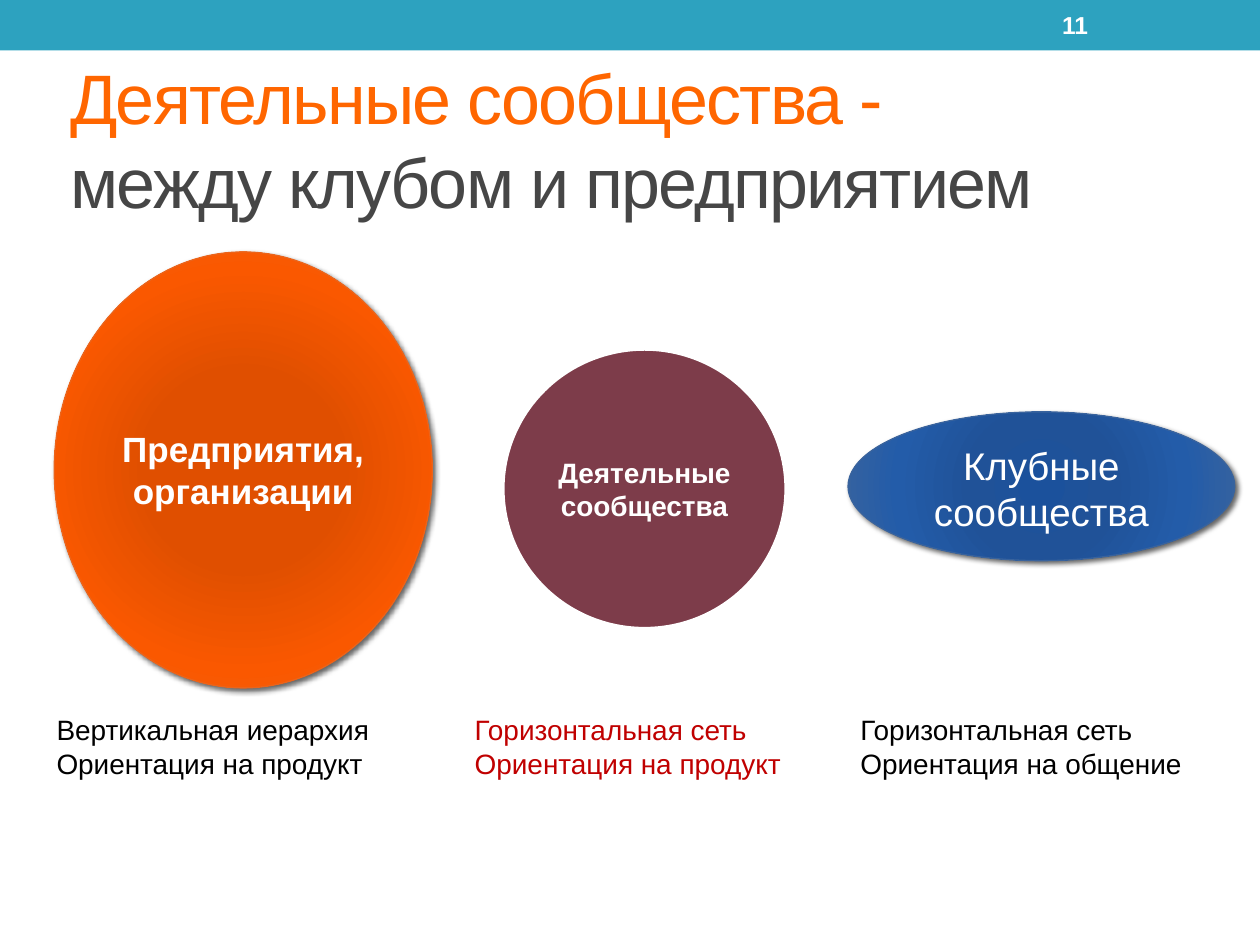
import pptx
import pptx.util
import pptx.dml.color
import pptx.enum.shapes
import pptx.enum.text
import pptx.oxml
import pptx.oxml.ns

Pt = pptx.util.Pt
SHAPES = pptx.enum.shapes.MSO_SHAPE
MIDDLE = pptx.enum.text.MSO_ANCHOR.MIDDLE
CENTER = pptx.enum.text.PP_ALIGN.CENTER
NS = pptx.oxml.ns.nsdecls("a")


def color(value):
    return pptx.dml.color.RGBColor.from_string(value)


def add_run(paragraph, text, size, value, bold=False):
    run = paragraph.add_run()
    run.text = text
    run.font.name = "Arial"
    run.font.size = Pt(size)
    run.font.bold = bold
    run.font.color.rgb = color(value)
    return run


deck = pptx.Presentation()
deck.slide_width, deck.slide_height = Pt(720), Pt(540)
slide = deck.slides.add_slide(deck.slide_layouts[6])

# Top band
band = slide.shapes.add_shape(SHAPES.RECTANGLE, 0, 0, Pt(720), Pt(28.8))
band.shadow.inherit = False
band.fill.solid()
band.fill.fore_color.rgb = color("2DA2BF")
band.line.fill.background()

# Title, two lines in two colours
title = slide.shapes.add_textbox(Pt(33.1), Pt(44.6), Pt(647.3), Pt(69.1)).text_frame
title.word_wrap = True
title.vertical_anchor = MIDDLE
heading = title.paragraphs[0]
first_line = add_run(heading, "Деятельные сообщества -", 40, "FF6600")
heading.add_line_break()
second_line = add_run(heading, "между клубом и предприятием", 40, "464646")
for line in (first_line, second_line):
    line.font._element.set("spc", "-100")

# Slide number
number = slide.shapes.add_textbox(Pt(599.8), Pt(1.4), Pt(84.2), Pt(25.9)).text_frame
number.word_wrap = True
number.vertical_anchor = MIDDLE
add_run(number.paragraphs[0], "11", 14, "FFFFFF", True)

# Ellipses: box, colours (one is solid, four are gradient stops), line, bold, runs
ellipses = [
    ((484.6, 235.4, 221, 85), ["1B519C", "205298", "235CA9", "39639D"], "39639D", 0.75,
     False, [("Клубные", 22), (" ", 24), ("сообщества", 22)]),
    ((286.6, 198.7, 163.4, 161.3), ["7D3C4A"], "FFFFFF", 3.5,
     True, [("Деятельные сообщества", 16)]),
    ((31, 144, 216, 249.1), ["E04F00", "E04F00", "FA5800", "EB641B"], "EB641B", 0.75,
     True, [("Предприятия, организации", 20)]),
]
for box, fills, outline, width, bold, words in ellipses:
    ellipse = slide.shapes.add_shape(SHAPES.OVAL, *map(Pt, box))
    ellipse.shadow.inherit = False
    ellipse.line.color.rgb = color(outline)
    ellipse.line.width = Pt(width)
    if len(fills) == 1:
        ellipse.fill.solid()
        ellipse.fill.fore_color.rgb = color(fills[0])
    else:
        stops = "".join(
            f'<a:gs pos="{place * 1000}"><a:srgbClr val="{value}"/></a:gs>'
            for place, value in zip((0, 34, 70, 100), fills))
        properties = ellipse._element.spPr
        properties.find(pptx.oxml.ns.qn("a:prstGeom")).addnext(pptx.oxml.parse_xml(
            f'<a:gradFill {NS} rotWithShape="1"><a:gsLst>{stops}</a:gsLst>'
            '<a:path path="circle"><a:fillToRect l="100000" t="100000" r="100000" b="100000"/>'
            '</a:path></a:gradFill>'))
        properties.find(pptx.oxml.ns.qn("a:effectLst")).append(pptx.oxml.parse_xml(
            f'<a:outerShdw {NS} blurRad="{Pt(3)}" dist="{Pt(2)}" dir="2700000" algn="tl" '
            'rotWithShape="0"><a:srgbClr val="000000"><a:alpha val="60000"/></a:srgbClr>'
            '</a:outerShdw>'))
    label = ellipse.text_frame
    label.word_wrap = True
    label.vertical_anchor = MIDDLE
    label.paragraphs[0].alignment = CENTER
    for text, size in words:
        add_run(label.paragraphs[0], text, size, "FFFFFF", bold)

# Captions under the ellipses
captions = [
    (25.2, "000000", "Вертикальная иерархия", "Ориентация на продукт"),
    (484.6, "000000", "Горизонтальная сеть", "Ориентация на общение"),
    (264.2, "C00000", "Горизонтальная сеть", "Ориентация на продукт"),
]
for left, value, structure, focus in captions:
    caption = slide.shapes.add_textbox(Pt(left), Pt(403.9), Pt(215.3), Pt(46.1)).text_frame
    caption.word_wrap = True
    add_run(caption.paragraphs[0], structure, 16, value)
    add_run(caption.add_paragraph(), focus, 16, value)

deck.save("out.pptx")
